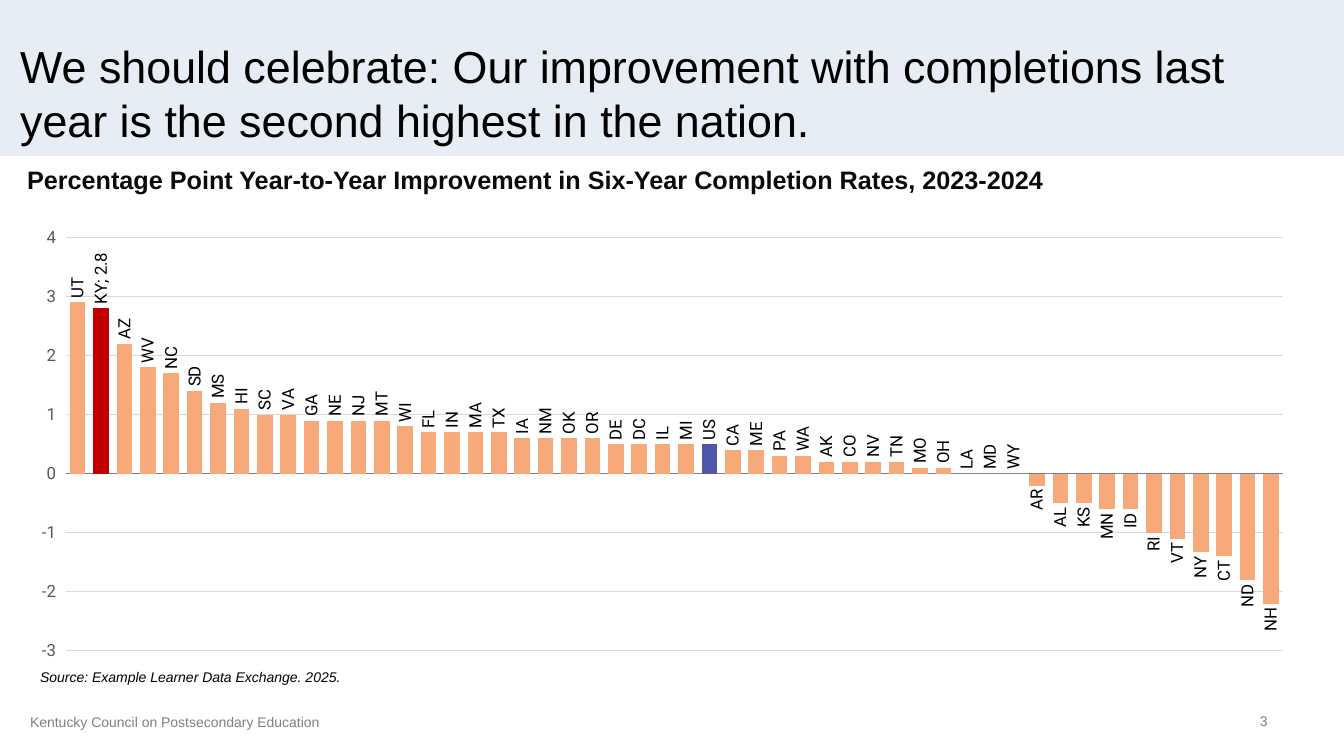
from lxml import etree
from pptx import Presentation
from pptx.chart.data import CategoryChartData
from pptx.dml.color import RGBColor
from pptx.enum.chart import XL_CHART_TYPE, XL_LABEL_POSITION, XL_TICK_LABEL_POSITION, XL_TICK_MARK
from pptx.enum.text import MSO_ANCHOR, MSO_AUTO_SIZE, PP_ALIGN
from pptx.oxml.ns import qn
from pptx.util import Inches, Pt


def color(hex_text):
    return RGBColor.from_string(hex_text)


def style(font, size, hex_text, name="Arial", bold=False, italic=False):
    font.size = Pt(size)
    font.name = name
    font.bold = bold
    font.italic = italic
    font.color.rgb = color(hex_text)


deck = Presentation()
deck.slide_width = Inches(13.33)
deck.slide_height = Inches(7.5)
page = deck.slides.add_slide(deck.slide_layouts[5])

# Title band
title = page.shapes.title
title.left, title.top = Inches(0), Inches(0)
title.width, title.height = Inches(13.33), Inches(1.55)
title.fill.solid()
title.fill.fore_color.rgb = color("E7EDF5")
frame = title.text_frame
frame.text = "We should celebrate: Our improvement with completions last year is the second highest in the nation."
frame.word_wrap = True
frame.auto_size = MSO_AUTO_SIZE.NONE
frame.vertical_anchor = MSO_ANCHOR.BOTTOM
frame.margin_left = frame.margin_right = Inches(0.2)
frame.margin_top, frame.margin_bottom = Inches(0.05), Inches(0.1)
para = frame.paragraphs[0]
para.alignment = PP_ALIGN.LEFT
style(para.runs[0].font, 32, "000000")

# Chart data
rates = {
    "UT": 2.9, "KY": 2.8, "AZ": 2.2, "WV": 1.8, "NC": 1.7, "SD": 1.4, "MS": 1.2, "HI": 1.1,
    "SC": 1, "VA": 1, "GA": 0.9, "NE": 0.9, "NJ": 0.9, "MT": 0.9, "WI": 0.8, "FL": 0.7,
    "IN": 0.7, "MA": 0.7, "TX": 0.7, "IA": 0.6, "NM": 0.6, "OK": 0.6, "OR": 0.6, "DE": 0.5,
    "DC": 0.5, "IL": 0.5, "MI": 0.5, "US": 0.5, "CA": 0.4, "ME": 0.4, "PA": 0.3, "WA": 0.3,
    "AK": 0.2, "CO": 0.2, "NV": 0.2, "TN": 0.2, "MO": 0.1, "OH": 0.1, "LA": 0, "MD": 0,
    "WY": 0, "AR": -0.2, "AL": -0.5, "KS": -0.5, "MN": -0.6, "ID": -0.6, "RI": -1, "VT": -1.1,
    "NY": -1.33, "CT": -1.4, "ND": -1.8, "NH": -2.2,
}
states = list(rates)
data = CategoryChartData()
data.categories = states
data.add_series("Series 1", rates.values())
chart = page.shapes.add_chart(XL_CHART_TYPE.COLUMN_CLUSTERED, Inches(0.38), Inches(2.22),
                              Inches(12.48), Inches(4.37), data).chart
chart.has_legend = False
chart.has_title = False
style(chart.font, 14, "000000", "Roboto")

# Columns, with Kentucky and the nation highlighted
plot = chart.plots[0]
plot.gap_width = 50
plot.overlap = -27
plot.vary_by_categories = False
series = plot.series[0]
series.invert_if_negative = False
series.format.fill.solid()
series.format.fill.fore_color.rgb = color("F8A97A")
for state, hex_text in (("KY", "C00000"), ("US", "4F57A6")):
    fill = series.points[states.index(state)].format.fill
    fill.solid()
    fill.fore_color.rgb = color(hex_text)

# Upright state labels; Kentucky also shows its value
labels = series.data_labels
labels.show_value = False
labels.show_category_name = True
kentucky = series.points[states.index("KY")].data_label
for label in (labels, kentucky):
    style(label.font, 12, "000000", "Roboto")
    label.position = XL_LABEL_POSITION.OUTSIDE_END
for body in series._element.iter(qn("a:bodyPr")):
    body.set("rot", "-5400000")
    body.set("vert", "horz")
kentucky_label = series._element.find(".//" + qn("c:dLbl"))
kentucky_label.find(qn("c:showCatName")).set("val", "1")
etree.SubElement(kentucky_label, qn("c:separator")).text = "; "

# Axes
states_axis = chart.category_axis
states_axis.tick_label_position = XL_TICK_LABEL_POSITION.NONE
states_axis.major_tick_mark = XL_TICK_MARK.NONE
states_axis.format.line.color.rgb = color("808080")
states_axis.format.line.width = Pt(0.75)
points_axis = chart.value_axis
points_axis.minimum_scale, points_axis.maximum_scale, points_axis.major_unit = -3, 4, 1
points_axis.major_tick_mark = XL_TICK_MARK.OUTSIDE
points_axis.format.line.fill.background()
points_axis.major_gridlines.format.line.color.rgb = color("D9D9D9")
points_axis.major_gridlines.format.line.width = Pt(0.75)
points_axis.tick_labels.number_format = "General"
points_axis.tick_labels.number_format_is_linked = False
style(points_axis.tick_labels.font, 12, "595959", "Roboto")

# Plot area position inside the chart
plot_area = chart._chartSpace.find(".//" + qn("c:plotArea"))
layout = plot_area.find(qn("c:layout"))
if layout is None:
    layout = etree.Element(qn("c:layout"))
    plot_area.insert(0, layout)
manual = etree.SubElement(layout, qn("c:manualLayout"))
for tag, value in (("layoutTarget", "inner"), ("xMode", "edge"), ("yMode", "edge"),
                   ("x", "0.022"), ("y", "0.031"), ("w", "0.967"), ("h", "0.939")):
    etree.SubElement(manual, qn("c:" + tag)).set("val", value)

# Heading, source, footer and page number
notes = (
    ("Percentage Point Year-to-Year Improvement in Six-Year Completion Rates, 2023-2024",
     (0.17, 1.58, 12.42, 0.4), 18, "0A0A0A", True, False, PP_ALIGN.LEFT, MSO_ANCHOR.TOP),
    ("Source: Example Learner Data Exchange. 2025.",
     (0.3, 6.58, 12.7, 0.33), 10, "000000", False, True, PP_ALIGN.LEFT, MSO_ANCHOR.TOP),
    ("Kentucky Council on Postsecondary Education",
     (0.2, 7.03, 8.5, 0.27), 10, "808080", False, False, PP_ALIGN.LEFT, MSO_ANCHOR.TOP),
    ("3", (12.11, 6.95, 0.56, 0.4), 10, "808080", False, False, PP_ALIGN.RIGHT, MSO_ANCHOR.MIDDLE),
)
for text, place, size, hex_text, bold, italic, alignment, anchor in notes:
    box = page.shapes.add_textbox(*map(Inches, place))
    box.text_frame.text = text
    box.text_frame.word_wrap = True
    box.text_frame.vertical_anchor = anchor
    para = box.text_frame.paragraphs[0]
    para.alignment = alignment
    style(para.runs[0].font, size, hex_text, bold=bold, italic=italic)

deck.save("out.pptx")
